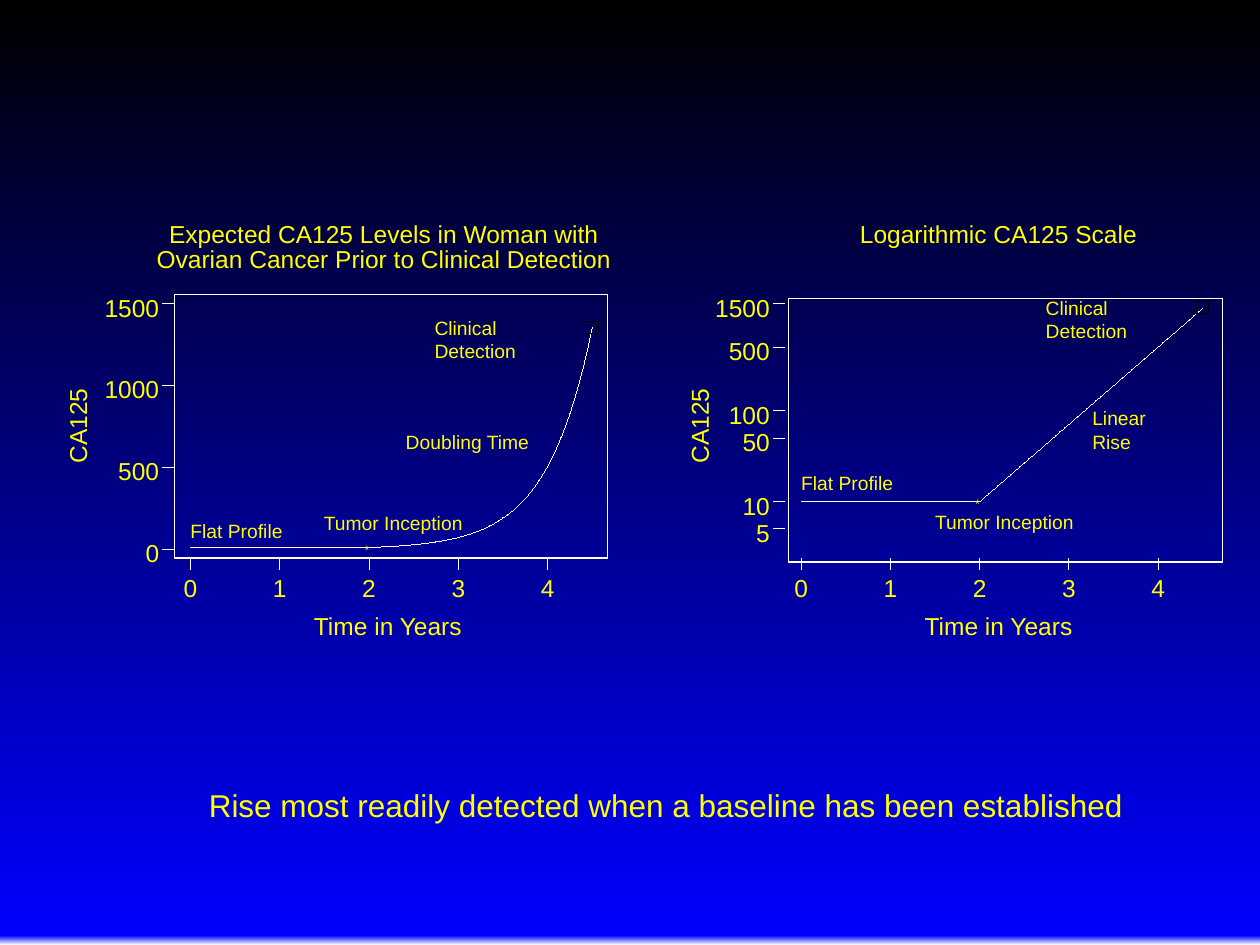
from copy import deepcopy
from dataclasses import dataclass
from math import exp, log, log10

from lxml import etree
from pptx import Presentation
from pptx.dml.color import RGBColor
from pptx.enum.shapes import MSO_CONNECTOR, MSO_SHAPE
from pptx.enum.text import MSO_AUTO_SIZE, PP_ALIGN
from pptx.oxml.ns import qn
from pptx.util import Cm, Pt

RECTANGLE = MSO_SHAPE.RECTANGLE
STRAIGHT = MSO_CONNECTOR.STRAIGHT
GROW = MSO_AUTO_SIZE.SHAPE_TO_FIT_TEXT
LEFT, CENTER, RIGHT = PP_ALIGN.LEFT, PP_ALIGN.CENTER, PP_ALIGN.RIGHT

HAIRLINE = Pt(0.01)
YEAR_WIDTH = 1.8
DIGIT_WIDTH = 0.28
BASELINE, INCEPTION, DETECTION, FINAL_LEVEL = 10, 2, 4.5, 1354
GROWTH = log(FINAL_LEVEL / BASELINE) / (DETECTION - INCEPTION)


@dataclass(frozen=True)
class Theme:
    font: str = "Arial"
    text: RGBColor = RGBColor(0xFF, 0xFF, 0x00)
    line: RGBColor = RGBColor(0xFF, 0xFF, 0xFF)
    marker: RGBColor = RGBColor(0x00, 0x00, 0x00)
    background: tuple = ((0, "FFFFFF"), (0.01, "0000FF"), (1, "000000"))
    footer_size: int = 18
    axis_size: int = 14
    note_size: int = 11
    star_size: int = 7


class Painter:
    def __init__(self, page, theme):
        self.page = page
        self.theme = theme

    def background(self):
        fill = self.page.background.fill
        fill.gradient()
        fill.gradient_angle = 90
        stop_list = self.page.element.find(".//" + qn("a:gsLst"))
        stop_list.append(deepcopy(stop_list[0]))
        for stop, (position, color) in zip(fill.gradient_stops, self.theme.background):
            stop.position = position
            stop.color.rgb = RGBColor.from_string(color)

    def outline(self, shape, color):
        shape.line.color.rgb = color
        shape.line.width = HAIRLINE

    def box(self, left, top, width, height, color, filled=False):
        shape = self.page.shapes.add_shape(
            RECTANGLE, Cm(left), Cm(top), Cm(width), Cm(height))
        shape.shadow.inherit = False
        if filled:
            shape.fill.solid()
            shape.fill.fore_color.rgb = color
        else:
            shape.fill.background()
        self.outline(shape, color)

    def tick(self, x1, y1, x2, y2):
        line = self.page.shapes.add_connector(STRAIGHT, Cm(x1), Cm(y1), Cm(x2), Cm(y2))
        self.outline(line, self.theme.line)
        etree.SubElement(line._element.spPr, qn("a:effectLst"))

    def curve(self, points):
        first, *rest = [(Cm(x), Cm(y)) for x, y in points]
        builder = self.page.shapes.build_freeform(*first)
        builder.add_line_segments(rest, close=False)
        shape = builder.convert_to_shape()
        shape.shadow.inherit = False
        shape.fill.background()
        self.outline(shape, self.theme.line)

    def text(self, words, left, top, width, height, size,
             align=LEFT, rotation=0, margins=(0, 0)):
        box = self.page.shapes.add_textbox(Cm(left), Cm(top), Cm(width), Cm(height))
        box.rotation = rotation
        frame = box.text_frame
        frame.margin_left = frame.margin_right = Cm(margins[0])
        frame.margin_top = frame.margin_bottom = Cm(margins[1])
        frame.word_wrap = False
        frame.auto_size = GROW
        frame.text = words
        para = frame.paragraphs[0]
        para.alignment = align
        para.font.name = self.theme.font
        para.font.size = Pt(size)
        para.font.color.rgb = self.theme.text

    def axis_text(self, words, left, top, width, align=CENTER, rotation=0):
        self.text(words, left, top, width, 0.61, self.theme.axis_size, align, rotation)

    def plot(self, origin, frame_left, frame_top, name_left, scale, levels,
             title_center, titles, notes):
        theme = self.theme
        width, height = 8.74, 5.31
        self.box(frame_left, frame_top, width, height, theme.line)
        self.box(frame_left, frame_top + height, width, 0, theme.line, filled=True)

        for year in range(5):
            x = origin + year * YEAR_WIDTH
            self.tick(x, 11.48, x, 11.25)
            self.axis_text(str(year), x - DIGIT_WIDTH / 2, 11.56, DIGIT_WIDTH)
        for level in levels:
            y = scale(level)
            label = str(level)
            label_width = DIGIT_WIDTH * len(label)
            self.tick(origin - 0.56, y, origin - 0.33, y)
            self.axis_text(label, origin - 0.63 - label_width, y - 0.22, label_width, RIGHT)

        years = [step / 20 for step in range(91)]
        points = [(origin + year * YEAR_WIDTH, scale(ca125(year))) for year in years]
        self.curve(points)
        self.text("*", origin + 3.51, scale(BASELINE) - 0.11, 0.12, 0.3, theme.star_size)
        end_x, end_y = points[-1]
        self.box(end_x - 0.13, end_y - 0.13, 0.25, 0.25, theme.marker)

        self.axis_text("Time in Years", origin + 2.48, 12.32, 3)
        self.axis_text("CA125", name_left, 8.28, 1.52, rotation=270)
        for row, (title, title_width) in enumerate(titles):
            self.axis_text(title, title_center - title_width / 2, 4.42 + 0.5 * row, title_width)
        for words, left, top, note_width in notes:
            self.text(words, left, top, note_width, 0.47, theme.note_size)


def ca125(year):
    return BASELINE * exp(GROWTH * max(0, year - INCEPTION))


def linear_scale(level):
    return 11.07 - 3.3 * level / 1000


def log_scale(level):
    return 10.11 - 1.83 * log10(level / BASELINE)


def main():
    deck = Presentation()
    deck.slide_width, deck.slide_height = Cm(25.4), Cm(19.05)
    theme = Theme()
    painter = Painter(deck.slides.add_slide(deck.slide_layouts[6]), theme)
    painter.background()
    painter.plot(
        3.84, 3.51, 5.94, 0.81, linear_scale, range(0, 1501, 500), 7.74,
        [("Expected CA125 Levels in Woman with", 8.75),
         ("Ovarian Cancer Prior to Clinical Detection", 9.25)],
        [("Flat Profile", 3.84, 10.46, 2.1),
         ("Tumor Inception", 6.53, 10.31, 2.95),
         ("Clinical\vDetection", 8.76, 6.38, 3),
         ("Doubling Time", 8.18, 8.67, 2.65)])
    painter.box(3.51, 5.94, 0, 5.31, theme.line, filled=True)
    painter.plot(
        16.15, 15.9, 6.02, 13.34, log_scale, (5, 10, 50, 100, 500, 1500), 20.13,
        [("Logarithmic CA125 Scale", 5.65)],
        [("Flat Profile", 16.15, 9.5, 2.1),
         ("Tumor Inception", 18.85, 10.29, 2.95),
         ("Clinical\vDetection", 21.08, 5.97, 3),
         ("Linear\vRise", 22.02, 8.2, 1.96)])
    painter.text("Rise most readily detected when a baseline has been established",
                 3.96, 15.72, 19.1, 1.02, theme.footer_size, margins=(0.25, 0.13))
    deck.save("out.pptx")


if __name__ == "__main__":
    main()
